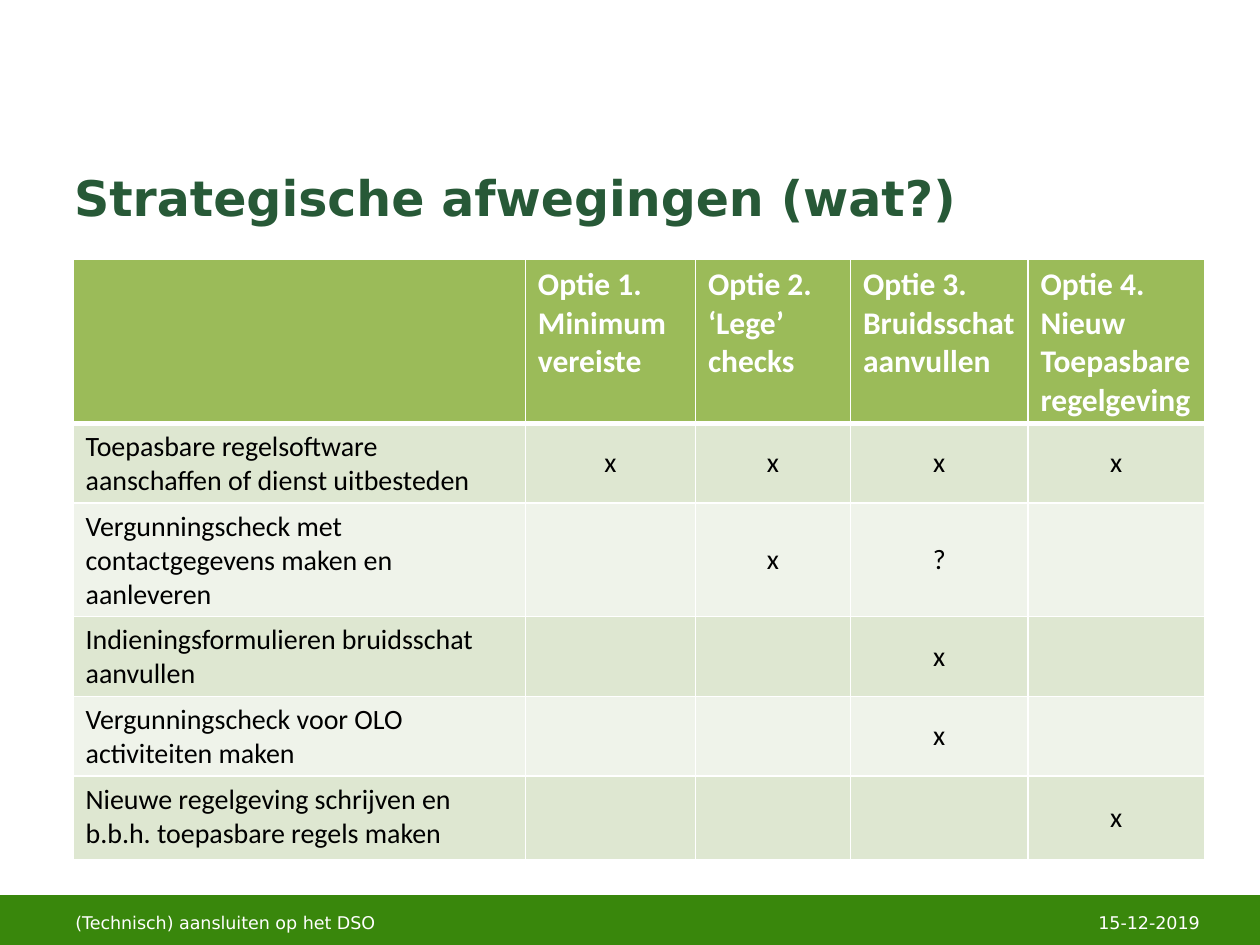
"""Build the slide with the table of strategic options."""
from lxml import etree
from pptx import Presentation
from pptx.dml.color import RGBColor
from pptx.enum import shapes, text
from pptx.oxml import ns
from pptx.util import Inches, Pt

WHITE = RGBColor(0xFF, 0xFF, 0xFF)
BLACK = RGBColor(0x00, 0x00, 0x00)
FOOTER_GREEN = RGBColor(0x39, 0x87, 0x0C)
TITLE_GREEN = RGBColor(0x27, 0x59, 0x37)
HEADER_GREEN = RGBColor(0x9B, 0xBB, 0x59)
BAND_DARK = RGBColor(0xDE, 0xE7, 0xD1)
BAND_LIGHT = RGBColor(0xEF, 0xF3, 0xEA)

HEADINGS = ["", "Optie 1.\nMinimum vereiste", "Optie 2.\n‘Lege’ checks",
            "Optie 3.\nBruidsschat aanvullen",
            "Optie 4.\nNieuw Toepasbare regelgeving"]
ACTIONS = [
    ["Toepasbare regelsoftware aanschaffen of dienst uitbesteden", "x", "x", "x", "x"],
    ["Vergunningscheck met contactgegevens maken en aanleveren", "", "x", "?", ""],
    ["Indieningsformulieren bruidsschat aanvullen", "", "", "x", ""],
    ["Vergunningscheck voor OLO activiteiten maken", "", "", "x", ""],
    ["Nieuwe regelgeving schrijven en b.b.h. toepasbare regels maken", "", "", "", "x"],
]
COLUMN_WIDTHS = [3.59, 1.35, 1.23, 1.41, 1.4]
ROW_HEIGHTS = [1.24, 0.6, 0.86, 0.62, 0.6, 0.66]


def add_label(box, words, size, color, bold, align, anchor):
    label = slide.shapes.add_textbox(*[Inches(length) for length in box])
    frame = label.text_frame
    frame.word_wrap = True
    frame.vertical_anchor = anchor
    frame.text = words
    frame.paragraphs[0].alignment = align
    font = frame.paragraphs[0].runs[0].font
    font.name, font.size, font.bold = "DejaVu Sans", Pt(size), bold
    font.color.rgb = color


def set_borders(cell, bottom_width):
    properties = cell._tc.get_or_add_tcPr()
    for index, side in enumerate(["lnL", "lnR", "lnT", "lnB"]):
        width = bottom_width if side == "lnB" else 1
        line = etree.Element(ns.qn(f"a:{side}"), w=str(Pt(width)))
        fill = etree.SubElement(line, ns.qn("a:solidFill"))
        etree.SubElement(fill, ns.qn("a:srgbClr"), val=str(WHITE))
        properties.insert(index, line)


prs = Presentation()
prs.slide_width, prs.slide_height = Inches(10), Inches(7.5)
slide = prs.slides.add_slide(prs.slide_layouts[6])

footer = slide.shapes.add_shape(shapes.MSO_SHAPE.RECTANGLE, Inches(0),
                                Inches(7.12), Inches(10), Inches(0.39))
footer.shadow.inherit = False
footer.fill.solid()
footer.fill.fore_color.rgb = FOOTER_GREEN
footer.line.color.rgb = FOOTER_GREEN
footer.line.width = Pt(2)

LEFT, RIGHT = text.PP_ALIGN.LEFT, text.PP_ALIGN.RIGHT
TOP, MIDDLE = text.MSO_ANCHOR.TOP, text.MSO_ANCHOR.MIDDLE
add_label((0.49, 1.28, 9, 0.73), "Strategische afwegingen (wat?)",
          28, TITLE_GREEN, True, LEFT, TOP)
add_label((7.29, 7.12, 2.33, 0.4), "15-12-2019", 10, WHITE, False, RIGHT, MIDDLE)
add_label((0.5, 7.12, 3.17, 0.4), "(Technisch) aansluiten op het DSO",
          10, WHITE, False, LEFT, MIDDLE)

options = slide.shapes.add_table(
    len(ROW_HEIGHTS), len(COLUMN_WIDTHS), Inches(0.58), Inches(2.06),
    Inches(sum(COLUMN_WIDTHS)), Inches(sum(ROW_HEIGHTS))).table
for column, width in zip(options.columns, COLUMN_WIDTHS):
    column.width = Inches(width)
for row, height in zip(options.rows, ROW_HEIGHTS):
    row.height = Inches(height)

for r, entries in enumerate([HEADINGS] + ACTIONS):
    is_header = r == 0
    band = HEADER_GREEN if is_header else BAND_DARK if r % 2 else BAND_LIGHT
    for c, entry in enumerate(entries):
        cell = options.cell(r, c)
        cell.text = entry
        cell.fill.solid()
        cell.fill.fore_color.rgb = band
        set_borders(cell, 3 if is_header else 1)
        is_mark = not is_header and c > 0
        if is_mark:
            cell.vertical_anchor = MIDDLE
        for paragraph in cell.text_frame.paragraphs:
            paragraph.alignment = text.PP_ALIGN.CENTER if is_mark else LEFT
            for run in paragraph.runs:
                run.font.name = "Calibri"
                run.font.size = Pt(18 if is_header else 16)
                run.font.bold = is_header
                run.font.color.rgb = WHITE if is_header else BLACK

prs.save("out.pptx")
